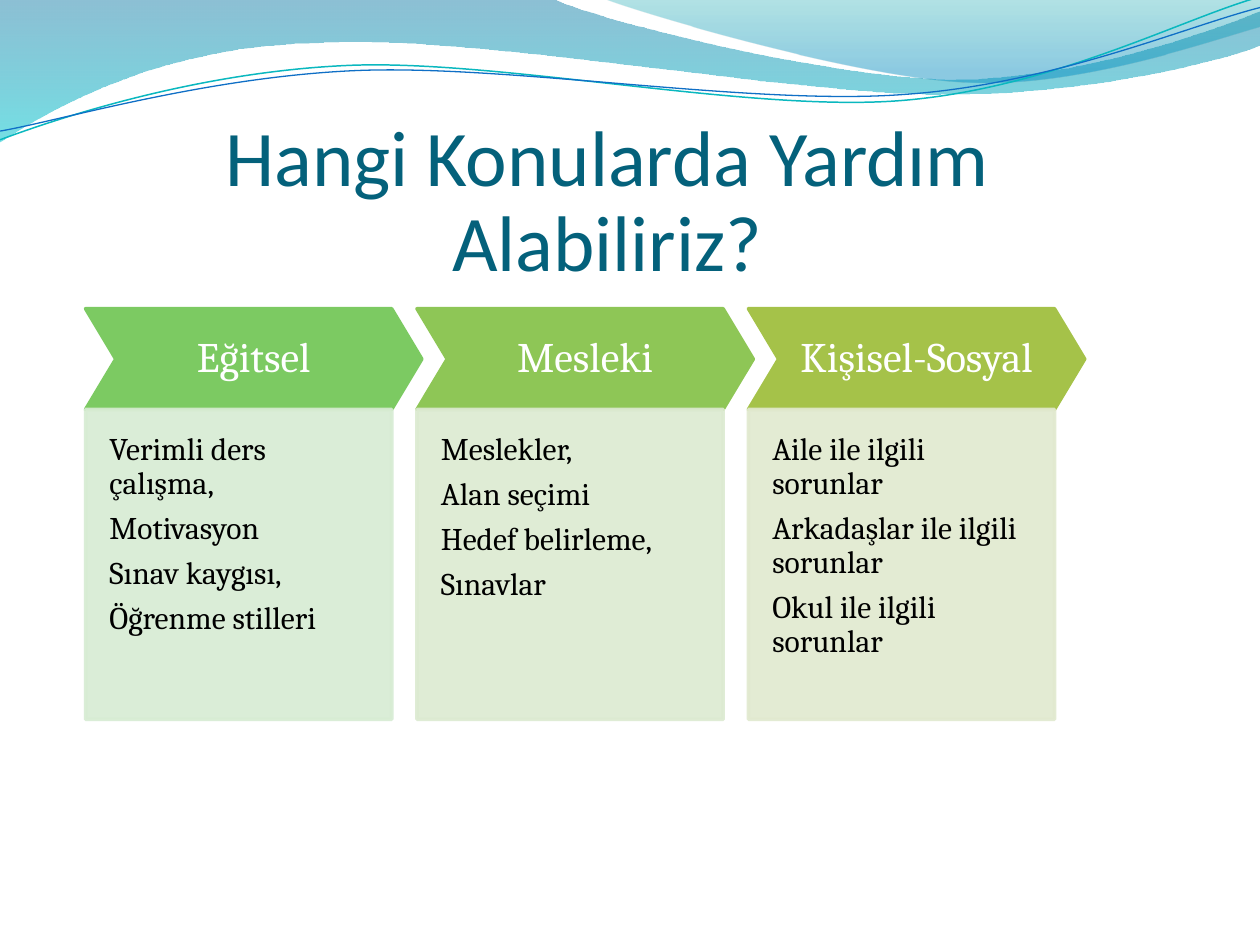
from lxml import etree
from pptx import Presentation
from pptx import util as u
from pptx.dml.color import RGBColor
from pptx.enum import shapes, text
from pptx.oxml import ns

WHITE = RGBColor(0xFF, 0xFF, 0xFF)
BLACK = RGBColor(0, 0, 0)
TITLE = RGBColor(0x04, 0x61, 0x7B)
TEAL = RGBColor(0x0A, 0xB8, 0xBF)
BLUE = RGBColor(0x0F, 0x6F, 0xC6)
DEEP = RGBColor(0x00, 0x74, 0xA1)
AQUA = RGBColor(0x00, 0xC6, 0xCF)
SEA = RGBColor(0x00, 0xA1, 0xA9)
SKY = RGBColor(0x00, 0x8B, 0xBF)

BAND = [(0, 0), (317, 0),
        (342.7, 12.2, 478.1, 45.4, 545.8, 45.4),
        (614.2, 45.4, 689.8, 18.7, 720, 6.5), (720, 25.9),
        (707.8, 31.7, 626.4, 54.7, 537.1, 54),
        (447.8, 54, 275, 20.2, 185, 24.5),
        (92.9, 25.9, 33.1, 59.8, -0.7, 81.4)]
SAIL = [(344.9, -0.7),
        (366.5, 7.9, 491, 44.6, 553.7, 46.8),
        (616.3, 49.7, 691.9, 23, 720, 15.1), (720, 0)]
WAVES = [
    (TEAL, 0.85, [(0, 79.9),
                  (34.6, 67, 113.8, 41, 199.4, 37.4),
                  (284.4, 33.8, 427, 64.1, 513.4, 57.6),
                  (599.8, 51.1, 675.4, 10.8, 718.6, -1.4)]),
    (BLUE, 0.75, [(0, 74.9),
                  (33.8, 69.1, 118.1, 43.9, 203.8, 40.3),
                  (290.2, 36.7, 429.8, 60.5, 516.2, 54),
                  (601.9, 48.2, 677.5, 15.1, 720, 4.3)]),
]
TOPICS = [
    ("Eğitsel", RGBColor(0x7C, 0xCA, 0x62), RGBColor(0xD7, 0xEC, 0xD3),
     ["Verimli ders çalışma,", "Motivasyon", "Sınav kaygısı,", "Öğrenme stilleri"]),
    ("Mesleki", RGBColor(0x8E, 0xC6, 0x56), RGBColor(0xDC, 0xEA, 0xD1),
     ["Meslekler,", "Alan seçimi", "Hedef belirleme,", "Sınavlar"]),
    ("Kişisel-Sosyal", RGBColor(0xA5, 0xC2, 0x49), RGBColor(0xE1, 0xE9, 0xCF),
     ["Aile ile ilgili sorunlar", "Arkadaşlar ile ilgili sorunlar",
      "Okul ile ilgili sorunlar"]),
]


class Deck:
    head = "Calibri"
    body = "Cambria"

    def __init__(self, wide, high):
        self.show = Presentation()
        self.show.slide_width, self.show.slide_height = u.Pt(wide), u.Pt(high)
        self.slide = self.show.slides.add_slide(self.show.slide_layouts[6])

    def fade(self, color, alpha):
        for node in color.iter(ns.qn("a:srgbClr")):
            etree.SubElement(node, ns.qn("a:alpha"), val=str(alpha * 1000))

    def curve(self, route, close):
        start, *legs = route
        pen = self.slide.shapes.build_freeform(u.Pt(start[0]), u.Pt(start[1]))
        for leg in legs:
            pairs = zip(leg[::2], leg[1::2])
            pen.add_line_segments([(u.Pt(x), u.Pt(y)) for x, y in pairs], close=False)
        shape = pen.convert_to_shape()
        shape.shadow.inherit = False
        nodes = iter(list(shape._element.iter(ns.qn("a:lnTo"))))
        for leg in legs:
            node = next(nodes)
            if len(leg) == 6:
                node.tag = ns.qn("a:cubicBezTo")
                for _ in range(2):
                    spare = next(nodes)
                    node.append(spare[0])
                    spare.getparent().remove(spare)
        if close:
            etree.SubElement(node.getparent(), ns.qn("a:close"))
        return shape

    def band(self, route, stops):
        shape = self.curve(route, True)
        shape.line.fill.background()
        shape.fill.gradient()
        shape.fill.gradient_angle = 270
        for stop, (place, color, alpha) in zip(shape.fill.gradient_stops, stops):
            stop.position = place
            stop.color.rgb = color
            self.fade(stop._gs, alpha)

    def wave(self, route, color, width):
        shape = self.curve(route, False)
        shape.fill.background()
        shape.line.color.rgb = color
        shape.line.width = u.Pt(width)

    def label(self, shape, lines, font, size, color, align, anchor, inset, after=0):
        frame = shape.text_frame
        frame.word_wrap = True
        frame.vertical_anchor = anchor
        (frame.margin_left, frame.margin_top,
         frame.margin_right, frame.margin_bottom) = map(u.Pt, inset)
        for i, line in enumerate(lines):
            para = frame.add_paragraph() if i else frame.paragraphs[0]
            para.alignment = align
            para.line_spacing = 0.9
            para.space_after = u.Pt(after)
            run = para.add_run()
            run.text = line
            run.font.name = font
            run.font.size = u.Pt(size)
            run.font.color.rgb = color

    def title(self, line, *rect):
        box = self.slide.shapes.add_textbox(*map(u.Pt, rect))
        self.label(box, [line], self.head, 45, TITLE, text.PP_ALIGN.CENTER,
                   text.MSO_ANCHOR.BOTTOM, (0, 3.6, 0, 0))

    def block(self, kind, color, *rect):
        shape = self.slide.shapes.add_shape(kind, *map(u.Pt, rect))
        shape.shadow.inherit = False
        shape.fill.solid()
        shape.fill.fore_color.rgb = color
        shape.line.color.rgb = color
        shape.line.width = u.Pt(2)
        return shape

    def arrow(self, line, color, *rect):
        shape = self.block(shapes.MSO_SHAPE.CHEVRON, color, *rect)
        shape.adjustments[0] = 0.3
        self.label(shape, [line], self.body, 24, WHITE, text.PP_ALIGN.CENTER,
                   text.MSO_ANCHOR.MIDDLE, (7.2,) * 4)

    def panel(self, lines, color, *rect):
        shape = self.block(shapes.MSO_SHAPE.RECTANGLE, color, *rect)
        self.fade(shape._element.spPr, 90)
        self.label(shape, lines, self.body, 18, BLACK, text.PP_ALIGN.LEFT,
                   text.MSO_ANCHOR.TOP, (13.7, 13.7, 13.7, 27.4), 6.3)


def main():
    deck = Deck(720, 540)
    deck.band(BAND, [(0, DEEP, 45), (1, AQUA, 55)])
    deck.band(SAIL, [(0, SEA, 30), (0.8, SKY, 45)])
    for color, width, route in WAVES:
        deck.wave(route, color, width)
    deck.title("Hangi Konularda Yardım Alabiliriz?", 36.7, 60.5, 620.6, 104.4)
    for i, (name, dark, pale, lines) in enumerate(TOPICS):
        left = 48.9 + 189.4 * i
        deck.arrow(name, dark, left, 176.4, 192.2, 57.6)
        deck.panel(lines, pale, left, 234, 175, 177.1)
    deck.show.save("out.pptx")


if __name__ == "__main__":
    main()
